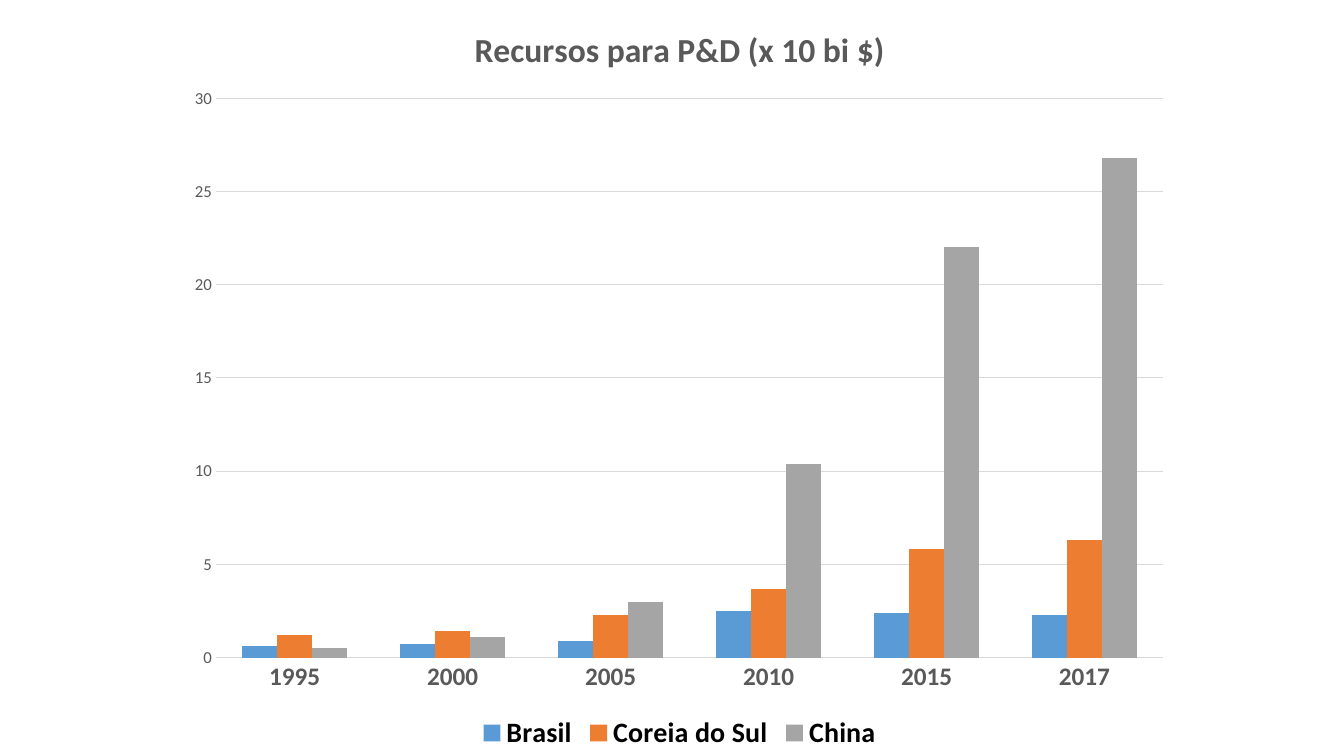
from lxml import etree
from pptx import Presentation
from pptx.chart.data import CategoryChartData
from pptx.dml.color import RGBColor
from pptx.enum.chart import XL_CHART_TYPE as ChartType
from pptx.enum.chart import XL_LEGEND_POSITION as LegendPosition
from pptx.enum.chart import XL_TICK_MARK as TickMark
from pptx.oxml.ns import qn
from pptx.util import Inches, Pt

COLORS = {
    "text": "595959",
    "legend": "000000",
    "grid": "D9D9D9",
    "Brasil": "5B9BD5",
    "Coreia do Sul": "ED7D31",
    "China": "A5A5A5",
}
YEARS = ["1995", "2000", "2005", "2010", "2015", "2017"]
FUNDING = {
    "Brasil": [0.6, 0.7, 0.9, 2.5, 2.4, 2.3],
    "Coreia do Sul": [1.2, 1.4, 2.3, 3.7, 5.8, 6.3],
    "China": [0.5, 1.1, 3, 10.4, 22, 26.8],
}
PLOT_AREA = {"x": 0.04, "y": 0.13, "w": 0.94, "h": 0.74}


def rgb(name):
    return RGBColor.from_string(COLORS[name])


def style_font(font, size, color="text", bold=False):
    font.name = "Calibri"
    font.size = Pt(size)
    font.bold = bold
    font.color.rgb = rgb(color)


def style_line(line):
    line.color.rgb = rgb("grid")
    line.width = Pt(0.75)


def set_title(chart, text, **font_format):
    chart.has_title = True
    chart.chart_title.include_in_layout = False
    paragraph = chart.chart_title.text_frame.paragraphs[0]
    run = paragraph.add_run()
    run.text = text
    style_font(run.font, **font_format)


def style_axis(axis, **font_format):
    axis.major_tick_mark = axis.minor_tick_mark = TickMark.NONE
    style_font(axis.tick_labels.font, **font_format)


def place_plot(chart):
    plot_area = chart.plots[0]._element.getparent()
    for old_layout in plot_area.findall(qn("c:layout")):
        plot_area.remove(old_layout)
    layout = etree.Element(qn("c:layout"))
    manual = etree.SubElement(layout, qn("c:manualLayout"))
    settings = {"layoutTarget": "inner", "xMode": "edge", "yMode": "edge", **PLOT_AREA}
    for tag, value in settings.items():
        etree.SubElement(manual, qn(f"c:{tag}")).set("val", str(value))
    plot_area.insert(0, layout)


def add_funding_chart(slide):
    funding = CategoryChartData()
    funding.categories = YEARS
    for country, values in FUNDING.items():
        funding.add_series(country, values)
    chart = slide.shapes.add_chart(
        ChartType.COLUMN_CLUSTERED,
        Inches(1.74), Inches(0), Inches(10), Inches(7.5), funding,
    ).chart
    style_font(chart.font, 10, "legend")
    set_title(chart, "Recursos para P&D (x 10 bi $)", size=24, bold=True)

    # Columns
    columns = chart.plots[0]
    columns.vary_by_categories = False
    columns.gap_width = 150
    columns.overlap = 0
    for country in columns.series:
        country.format.fill.solid()
        country.format.fill.fore_color.rgb = rgb(country.name)

    # Axes
    years, amounts = chart.category_axis, chart.value_axis
    style_axis(years, size=18, bold=True)
    style_line(years.format.line)
    style_axis(amounts, size=12)
    amounts.format.line.fill.background()
    amounts.minimum_scale, amounts.maximum_scale = 0, 30
    amounts.major_unit = 5
    amounts.has_major_gridlines = True
    style_line(amounts.major_gridlines.format.line)

    # Legend
    chart.has_legend = True
    chart.legend.position = LegendPosition.BOTTOM
    chart.legend.include_in_layout = False
    style_font(chart.legend.font, 20, "legend", bold=True)
    place_plot(chart)


def main():
    deck = Presentation()
    deck.slide_width, deck.slide_height = Inches(13.33), Inches(7.5)
    slide = deck.slides.add_slide(deck.slide_layouts[6])
    add_funding_chart(slide)
    deck.save("out.pptx")


if __name__ == "__main__":
    main()
